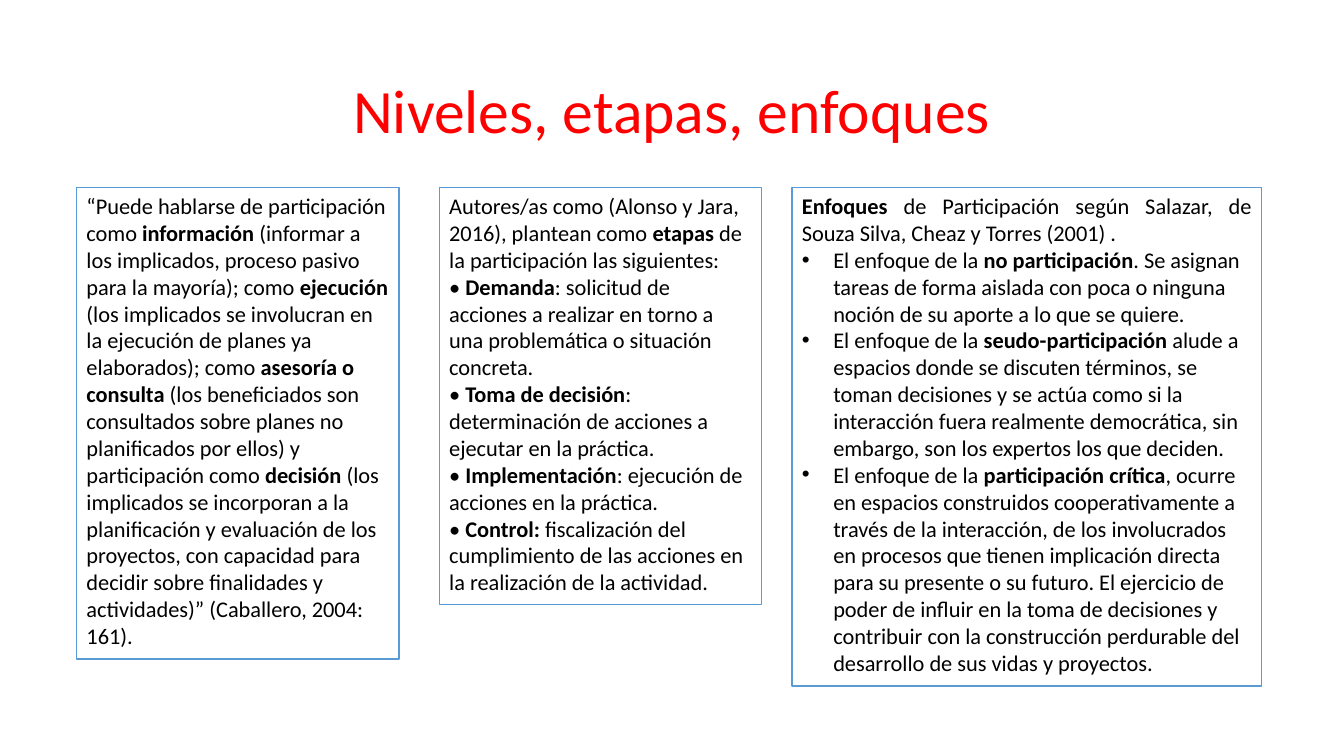
from lxml import etree
from pptx import Presentation
from pptx.dml.color import RGBColor
from pptx.enum.shapes import MSO_SHAPE
from pptx.enum.text import MSO_ANCHOR, MSO_AUTO_SIZE, PP_ALIGN
from pptx.oxml.ns import qn
from pptx.util import Cm, Pt

RECTANGLE = MSO_SHAPE.RECTANGLE
TOP, MIDDLE = MSO_ANCHOR.TOP, MSO_ANCHOR.MIDDLE
GROW = MSO_AUTO_SIZE.SHAPE_TO_FIT_TEXT
NO_FIT = MSO_AUTO_SIZE.NONE
LEFT, CENTER, JUSTIFY = PP_ALIGN.LEFT, PP_ALIGN.CENTER, PP_ALIGN.JUSTIFY

FONT = "Calibri"
COLORS = {"title": "FF0000", "text": "000000", "fill": "FFFFFF", "border": "5B9BD5"}
BOX_TOP = Cm(4.72)
BULLET_INDENT = Cm(0.79)

LEVELS = [
    "“Puede hablarse de participación como **información** (informar a los "
    "implicados, proceso pasivo para la mayoría); como **ejecución **(los "
    "implicados se involucran en la ejecución de planes ya elaborados); como "
    "**asesoría o consulta** (los beneficiados son consultados sobre planes no "
    "planificados por ellos) y participación como **decisión **(los implicados "
    "se incorporan a la planificación y evaluación de los proyectos, con "
    "capacidad para decidir sobre finalidades y actividades)” (Caballero, 2004: 161).",
]
STAGES = [
    "Autores/as como (Alonso y Jara, 2016), plantean como **etapas** de la "
    "participación las siguientes:",
    "• **Demanda**: solicitud de acciones a realizar en torno a una problemática "
    "o situación concreta.",
    "• **Toma de decisión**: determinación de acciones a ejecutar en la práctica.",
    "• **Implementación**: ejecución de acciones en la práctica.",
    "• **Control:** fiscalización del cumplimiento de las acciones en la "
    "realización de la actividad.",
]
APPROACHES = [
    "**Enfoques** de Participación según Salazar, de Souza Silva, Cheaz y "
    "Torres (2001) .",
    "El enfoque de la **no participación**. Se asignan tareas de forma aislada "
    "con poca o ninguna noción de su aporte a lo que se quiere.",
    "El enfoque de la **seudo-participación** alude a espacios donde se discuten "
    "términos, se toman decisiones y se actúa como si la interacción fuera "
    "realmente democrática, sin embargo, son los expertos los que deciden.",
    "El enfoque de la **participación crítica**, ocurre en espacios construidos "
    "cooperativamente a través de la interacción, de los involucrados en procesos "
    "que tienen implicación directa para su presente o su futuro. El ejercicio de "
    "poder de influir en la toma de decisiones y contribuir con la construcción "
    "perdurable del desarrollo de sus vidas y proyectos.",
]


def rgb(name):
    return RGBColor.from_string(COLORS[name])


def format_run(r, size, color, bold=False):
    r.font.name = FONT
    r.font.size = Pt(size)
    r.font.bold = bold
    r.font.color.rgb = rgb(color)


def add_marked_text(p, text):
    for i, part in enumerate(text.split("**")):
        if part:
            r = p.add_run()
            r.text = part
            format_run(r, 16, "text", bold=i % 2 == 1)


def add_bullet(p):
    pPr = p._p.get_or_add_pPr()
    pPr.set("marL", str(BULLET_INDENT))
    pPr.set("indent", str(-BULLET_INDENT))
    etree.SubElement(pPr, qn("a:buFont")).set("typeface", "Arial")
    etree.SubElement(pPr, qn("a:buChar")).set("char", "•")


def set_title(s, text):
    title = s.shapes.title
    title.left, title.top = Cm(2.33), Cm(1.02)
    title.width, title.height = Cm(29.21), Cm(3.68)
    tf = title.text_frame
    tf.text = text
    tf.auto_size = NO_FIT
    tf.vertical_anchor = MIDDLE
    p = tf.paragraphs[0]
    p.alignment = CENTER
    p.line_spacing = 0.9
    format_run(p.runs[0], 44, "title")


def add_box(s, left, width, height, texts):
    sp = s.shapes.add_shape(RECTANGLE, left, BOX_TOP, width, height)
    sp.shadow.inherit = False
    sp.fill.solid()
    sp.fill.fore_color.rgb = rgb("fill")
    sp.line.color.rgb = rgb("border")
    sp.line.width = Pt(1)
    tf = sp.text_frame
    tf.word_wrap = True
    tf.auto_size = GROW
    tf.vertical_anchor = TOP
    for i, text in enumerate(texts):
        p = tf.add_paragraph() if i else tf.paragraphs[0]
        p.alignment = LEFT
        add_marked_text(p, text)
    return tf.paragraphs


def main():
    prs = Presentation()
    prs.slide_width, prs.slide_height = Cm(33.87), Cm(19.05)
    s = prs.slides.add_slide(prs.slide_layouts[5])
    set_title(s, "Niveles, etapas, enfoques")
    add_box(s, Cm(1.93), Cm(8.13), Cm(11.89), LEVELS)
    add_box(s, Cm(11.07), Cm(8.13), Cm(10.52), STAGES)
    heading, *items = add_box(s, Cm(19.96), Cm(11.84), Cm(12.57), APPROACHES)
    heading.alignment = JUSTIFY
    for p in items:
        add_bullet(p)
    prs.save("out.pptx")


if __name__ == "__main__":
    main()
